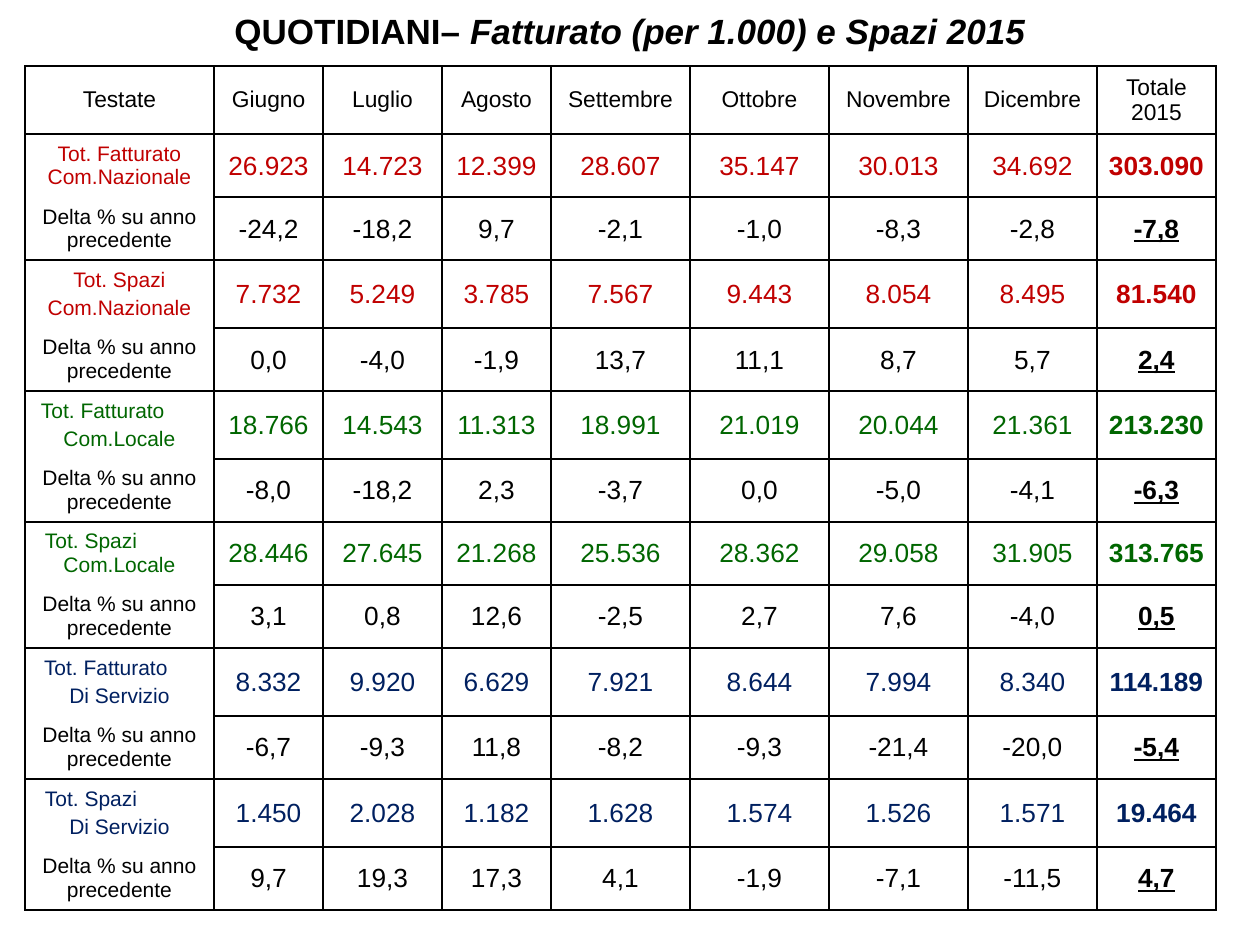
from lxml import etree
from pptx import Presentation, util as u
from pptx.dml.color import RGBColor
from pptx.enum import text
from pptx.oxml.ns import qn

BLACK, WHITE, RED, GREEN, NAVY = "000000", "FFFFFF", "C00000", "006600", "002060"
COLUMN_WIDTHS = [189, 109, 119, 109, 139, 139, 139, 129, 119]
SHORT_ROW, TALL_ROW = 63, 68
LABEL_MARGINS = dict(margin_left=13, margin_right=13, margin_top=6, margin_bottom=6)
VALUE_MARGINS = dict(margin_left=1, margin_right=1, margin_top=1, margin_bottom=0)
DELTA_LABEL = [("Delta % su anno precedente", None)]
HEADINGS = ["Testate", "Giugno", "Luglio", "Agosto", "Settembre", "Ottobre",
            "Novembre", "Dicembre", "Totale 2015"]

# Each group: label lines with left indent (None = centred), gap between the
# lines in points, colour, totals, deltas.
GROUPS = [
    ([("Tot. Fatturato Com.Nazionale", None)], 0, RED,
     "26.923 14.723 12.399 28.607 35.147 30.013 34.692 303.090",
     "-24,2 -18,2 9,7 -2,1 -1,0 -8,3 -2,8 -7,8"),
    ([("Tot. Spazi", None), ("Com.Nazionale", None)], 2.4, RED,
     "7.732 5.249 3.785 7.567 9.443 8.054 8.495 81.540",
     "0,0 -4,0 -1,9 13,7 11,1 8,7 5,7 2,4"),
    ([("Tot. Fatturato", 3), ("Com.Locale", None)], 2.4, GREEN,
     "18.766 14.543 11.313 18.991 21.019 20.044 21.361 213.230",
     "-8,0 -18,2 2,3 -3,7 0,0 -5,0 -4,1 -6,3"),
    ([("Tot. Spazi", 7), ("Com.Locale", None)], 0, GREEN,
     "28.446 27.645 21.268 25.536 28.362 29.058 31.905 313.765",
     "3,1 0,8 12,6 -2,5 2,7 7,6 -4,0 0,5"),
    ([("Tot. Fatturato", 6), ("Di Servizio", None)], 2.4, NAVY,
     "8.332 9.920 6.629 7.921 8.644 7.994 8.340 114.189",
     "-6,7 -9,3 11,8 -8,2 -9,3 -21,4 -20,0 -5,4"),
    ([("Tot. Spazi", 7), ("Di Servizio", None)], 2.4, NAVY,
     "1.450 2.028 1.182 1.628 1.574 1.526 1.571 19.464",
     "9,7 19,3 17,3 4,1 -1,9 -7,1 -11,5 4,7"),
]


def px(length):
    return u.Emu(round(length * 914400 / 126))


def rgb(colour):
    return RGBColor.from_string(colour)


def set_font(font, size, colour=BLACK, **formats):
    font.color.rgb = rgb(colour)
    for name, value in dict(name="Arial", size=u.Pt(size), **formats).items():
        setattr(font, name, value)


def set_borders(cell, hidden=""):
    """Draw thin black edges, except the hidden ones among L, R, T and B."""
    properties = cell._tc.get_or_add_tcPr()
    for edge in "LRTB":
        line = etree.SubElement(properties, qn(f"a:ln{edge}"), w=str(u.Pt(1)))
        if edge in hidden:
            etree.SubElement(line, qn("a:noFill"))
        else:
            fill = etree.SubElement(line, qn("a:solidFill"))
            etree.SubElement(fill, qn("a:srgbClr"), val=BLACK)


def fill_cell(cell, lines, size, margins, colour=BLACK, gap=0, hidden="", **formats):
    set_borders(cell, hidden)
    cell.fill.solid()
    cell.fill.fore_color.rgb = rgb(WHITE)
    cell.vertical_anchor = text.MSO_ANCHOR.MIDDLE
    for name, value in margins.items():
        setattr(cell, name, px(value))
    for number, (wording, indent) in enumerate(lines):
        frame = cell.text_frame
        paragraph = frame.add_paragraph() if number else frame.paragraphs[0]
        paragraph.space_before = u.Pt(gap if number else 0)
        if indent is None:
            paragraph.alignment = text.PP_ALIGN.CENTER
        else:
            paragraph.alignment = text.PP_ALIGN.LEFT
            paragraph._p.get_or_add_pPr().set("marL", str(px(indent)))
        run = paragraph.add_run()
        run.text = wording
        set_font(run.font, size, colour, **formats)


def fill_values(cells, values, colour=BLACK, underline=False):
    """Fill one row of figures, with the yearly total in bold."""
    last = len(values) - 1
    for column, value in enumerate(values):
        total = column == last
        fill_cell(cells[column + 1], [(value, None)], 15, VALUE_MARGINS, colour,
                  bold=total, underline=total and underline)


def place_title(slide, left, top, width, height):
    title = slide.shapes.title
    for name, value in dict(left=left, top=top, width=width, height=height).items():
        setattr(title, name, px(value))
    frame = title.text_frame
    frame.auto_size = text.MSO_AUTO_SIZE.NONE
    frame.vertical_anchor = text.MSO_ANCHOR.MIDDLE
    paragraph = frame.paragraphs[0]
    paragraph.alignment = text.PP_ALIGN.CENTER
    for wording, italic in [("QUOTIDIANI– ", False),
                            ("Fatturato (per 1.000) e Spazi 2015", True)]:
        run = paragraph.add_run()
        run.text = wording
        set_font(run.font, 20, bold=True, italic=italic)


def place_revenue_table(slide, left, top):
    heights = [TALL_ROW]
    for _, gap, *_ in GROUPS:
        heights += [TALL_ROW if gap else SHORT_ROW, SHORT_ROW]
    table = slide.shapes.add_table(
        len(heights), len(COLUMN_WIDTHS), px(left), px(top),
        px(sum(COLUMN_WIDTHS)), px(sum(heights))).table
    table.first_row = table.horz_banding = False
    for column, width in zip(table.columns, COLUMN_WIDTHS):
        column.width = px(width)
    for row, height in zip(table.rows, heights):
        row.height = px(height)

    rows = [row.cells for row in table.rows]
    for cell, heading in zip(rows[0], HEADINGS):
        fill_cell(cell, [(heading, None)], 13, LABEL_MARGINS)
    for group, (label, gap, colour, totals, deltas) in enumerate(GROUPS):
        total_row, delta_row = rows[2 * group + 1], rows[2 * group + 2]
        fill_cell(total_row[0], label, 12, LABEL_MARGINS, colour, gap, hidden="B")
        fill_values(total_row, totals.split(), colour)
        fill_cell(delta_row[0], DELTA_LABEL, 12, LABEL_MARGINS, hidden="T")
        fill_values(delta_row, deltas.split(), underline=True)


def main():
    deck = Presentation()
    deck.slide_width, deck.slide_height = px(1260), px(945)
    slide = deck.slides.add_slide(deck.slide_layouts[5])
    place_title(slide, 0, 3, 1260, 55)
    place_revenue_table(slide, 25, 66)
    deck.save("out.pptx")


if __name__ == "__main__":
    main()
